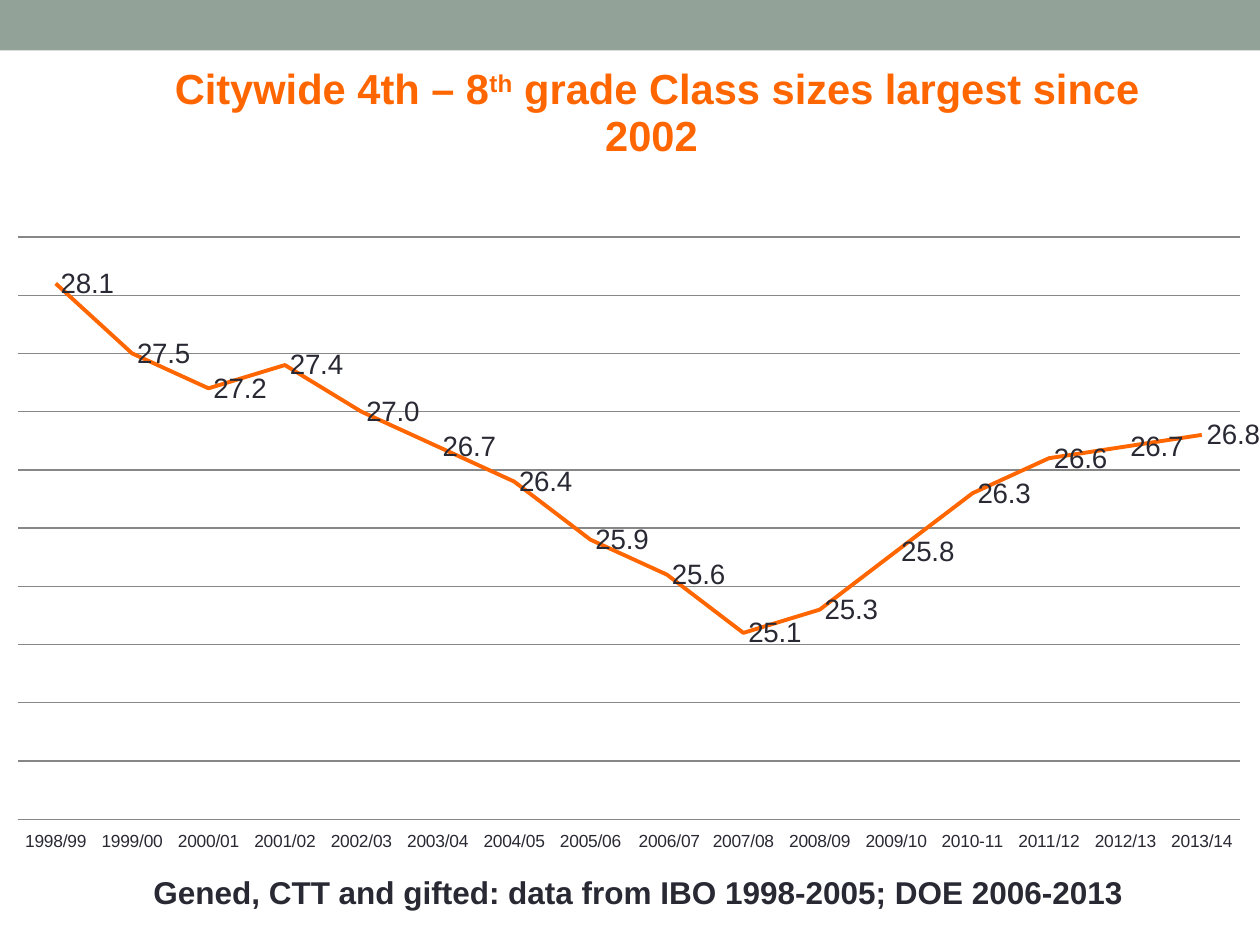
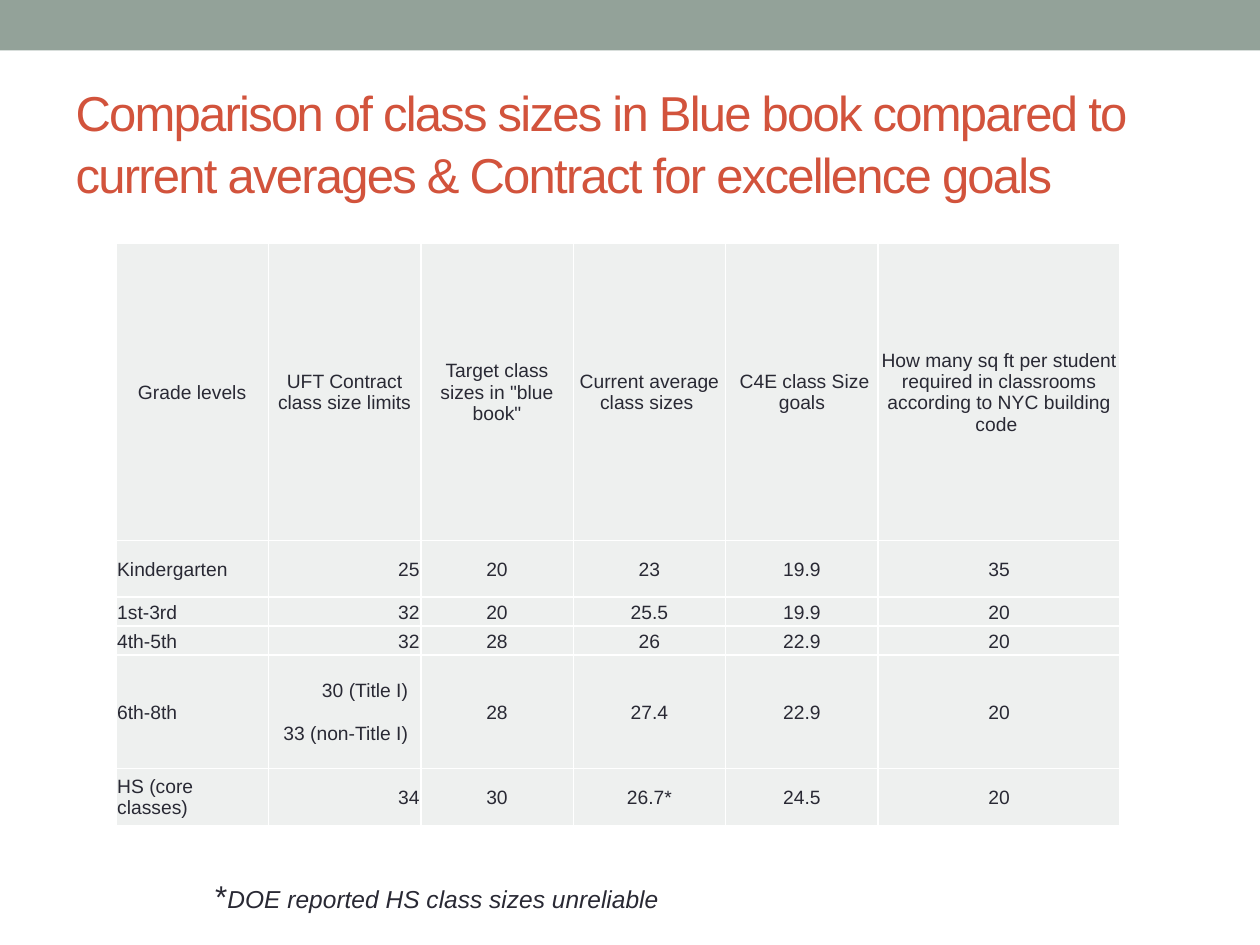
from lxml import etree
from pptx import Presentation
from pptx.chart.data import CategoryChartData
from pptx.dml.color import RGBColor
from pptx.enum.chart import XL_CHART_TYPE, XL_LABEL_POSITION, XL_TICK_LABEL_POSITION, XL_TICK_MARK
from pptx.enum.shapes import MSO_SHAPE
from pptx.enum.text import MSO_ANCHOR, MSO_AUTO_SIZE, PP_ALIGN
from pptx.oxml import parse_xml
from pptx.oxml.ns import nsdecls, qn
from pptx.util import Inches, Pt

LINE = XL_CHART_TYPE.LINE
LABEL_RIGHT = XL_LABEL_POSITION.RIGHT
LABELS_LOW = XL_TICK_LABEL_POSITION.LOW
NO_TICK = XL_TICK_MARK.NONE
RECTANGLE = MSO_SHAPE.RECTANGLE
MIDDLE = MSO_ANCHOR.MIDDLE
FIT_SHAPE, NO_FIT = MSO_AUTO_SIZE.SHAPE_TO_FIT_TEXT, MSO_AUTO_SIZE.NONE
LEFT, CENTER, RIGHT = PP_ALIGN.LEFT, PP_ALIGN.CENTER, PP_ALIGN.RIGHT

FONT = "Arial"
COLORS = {
    "band": "93A299",
    "text": "292934",
    "title": "D2533C",
    "accent": "FF6600",
    "grid": "878787",
    "cell": "EEF0EF",
    "border": "FFFFFF",
}
TITLE_ONLY, BLANK = 5, 6

SCHOOL_YEARS = [
    "1998/99", "1999/00", "2000/01", "2001/02", "2002/03", "2003/04", "2004/05", "2005/06",
    " 2006/07", "2007/08", "2008/09", "2009/10", "2010-11", "2011/12", "2012/13", "2013/14",
]
CLASS_SIZES = [28.1, 27.5, 27.2, 27.4, 27, 26.7, 26.4, 25.9,
               25.6, 25.1, 25.3, 25.8, 26.3, 26.6, 26.7, 26.8]

COLUMN_WIDTHS = [1.21] * 5 + [1.92]
ROW_HEIGHTS = [2.36, 0.45, 0.23, 0.23, 0.9, 0.45]
COLUMN_ALIGNMENTS = [LEFT, RIGHT] + [CENTER] * 4
COMPARISON = [
    ["Grade levels", "UFT Contract class size limits", 'Target class sizes in "blue book"',
     "Current average class sizes ", " C4E class Size goals",
     "How many sq ft per student required in classrooms according to NYC building code "],
    ["Kindergarten", "25", "20", "23", "19.9", "35"],
    ["1st-3rd", "32", "20", "25.5", "19.9", "20"],
    ["4th-5th", "32", "28", "26", "22.9", "20"],
    ["6th-8th", "30 (Title I)\n33 (non-Title I)", "28", "27.4", "22.9", "20"],
    ["HS (core classes)", "34", "30", "26.7*", "24.5", "20"],
]


def rgb(name):
    """Return the named palette colour."""
    return RGBColor.from_string(COLORS[name])


def style_font(font, size, color="text", bold=False, italic=False):
    """Apply the shared typeface with a size, colour and emphasis."""
    font.name, font.size = FONT, Pt(size)
    font.bold, font.italic = bold, italic
    font.color.rgb = rgb(color)


def new_slide(prs, layout):
    """Add a slide with the top band."""
    slide = prs.slides.add_slide(prs.slide_layouts[layout])
    band = slide.shapes.add_shape(RECTANGLE, 0, 0, prs.slide_width, Inches(0.4))
    band.shadow.inherit = False
    band.fill.solid()
    band.fill.fore_color.rgb = rgb("band")
    band.line.fill.background()
    return slide


def add_note(slide, box):
    """Add a one-line note and return its paragraph."""
    note = slide.shapes.add_textbox(*map(Inches, box)).text_frame
    note.word_wrap = False
    note.auto_size = FIT_SHAPE
    return note.paragraphs[0]


def set_layout(parent, index, target=None, **fractions):
    """Place a chart part by fractions of the chart area."""
    for old in parent.findall(qn("c:layout")):
        parent.remove(old)
    layout = parse_xml(f"<c:layout {nsdecls('c')}><c:manualLayout/></c:layout>")
    settings = {"layoutTarget": target} if target else {}
    settings.update(xMode="edge", yMode="edge", **fractions)
    for tag, value in settings.items():
        etree.SubElement(layout[0], qn(f"c:{tag}")).set("val", str(value))
    parent.insert(index, layout)


def add_chart_title(chart):
    """Write the chart heading with its raised ordinal."""
    paragraph = chart.chart_title.text_frame.paragraphs[0]
    style_font(paragraph.font, 24, "accent", bold=True)
    for text, raised in [("Citywide 4th – 8", False), ("th", True),
                         (" grade Class sizes largest since 2002 ", False)]:
        run = paragraph.add_run()
        run.text = text
        style_font(run.font, 24, "accent", bold=True)
        if raised:
            run.font._element.set("baseline", "30000")
    set_layout(chart.chart_title._element, 1, x=0.13, y=0.02)


def add_size_chart(slide, box):
    """Add the line chart of class sizes by school year."""
    data = CategoryChartData(number_format="0.0")
    data.categories = SCHOOL_YEARS
    data.add_series("Series 1", CLASS_SIZES)
    chart = slide.shapes.add_chart(LINE, *map(Inches, box), data).chart
    style_font(chart.font, 10)
    chart.has_legend = False
    add_chart_title(chart)
    set_layout(chart._chartSpace.chart.plotArea, 0, "inner", x=0.006, y=0.209, w=0.987, h=0.623)

    years, sizes = chart.category_axis, chart.value_axis
    years.major_tick_mark = NO_TICK
    years.tick_label_position = LABELS_LOW
    sizes.minimum_scale, sizes.maximum_scale, sizes.major_unit = 23.5, 28.5, 0.5
    sizes.has_major_gridlines = True
    for line in (years.format.line, sizes.major_gridlines.format.line):
        line.color.rgb = rgb("grid")
        line.width = Pt(0.75)
    sizes.visible = False

    chart.plots[0].vary_by_categories = False
    trend = chart.plots[0].series[0]
    trend.smooth = False
    trend.format.line.color.rgb = rgb("accent")
    trend.format.line.width = Pt(2.25)
    labels = trend.data_labels
    labels.show_value = True
    labels.position = LABEL_RIGHT
    labels.number_format, labels.number_format_is_linked = "0.0", False
    style_font(labels.font, 16)


def style_cell(cell, alignment):
    """Format a table cell's text, margins, fill and borders."""
    cell.vertical_anchor = MIDDLE
    cell.margin_left = cell.margin_right = cell.margin_top = Inches(0.01)
    cell.margin_bottom = 0
    cell.fill.solid()
    cell.fill.fore_color.rgb = rgb("cell")
    paragraphs = cell.text_frame.paragraphs
    for paragraph in paragraphs:
        paragraph.alignment = alignment
        style_font(paragraph.font, 11)
    for paragraph in paragraphs[:-1]:
        paragraph.space_after = Pt(12.6)
        paragraph._p.get_or_add_pPr().set("marR", str(Inches(0.09)))
    for index, side in enumerate(("lnL", "lnR", "lnT", "lnB")):
        cell._tc.get_or_add_tcPr().insert(index, parse_xml(
            f'<a:{side} {nsdecls("a")} w="{Pt(1)}"><a:solidFill>'
            f'<a:srgbClr val="{COLORS["border"]}"/></a:solidFill></a:{side}>'))


def add_comparison_table(slide, box):
    """Add the table of class size limits, goals and averages."""
    table = slide.shapes.add_table(len(ROW_HEIGHTS), len(COLUMN_WIDTHS), *map(Inches, box)).table
    table.first_row = table.horz_banding = False
    for column, width in zip(table.columns, COLUMN_WIDTHS):
        column.width = Inches(width)
    for row_index, (row, height) in enumerate(zip(table.rows, ROW_HEIGHTS)):
        row.height = Inches(height)
        for cell, text, alignment in zip(row.cells, COMPARISON[row_index], COLUMN_ALIGNMENTS):
            cell.text = text
            style_cell(cell, alignment if row_index else CENTER)


def add_title(slide, box, text):
    """Place and format the slide title."""
    title = slide.shapes.title
    title.left, title.top, title.width, title.height = map(Inches, box)
    frame = title.text_frame
    frame.text = text
    frame.word_wrap = True
    frame.auto_size = NO_FIT
    frame.vertical_anchor = MIDDLE
    heading = frame.paragraphs[0]
    heading.alignment = LEFT
    heading.line_spacing = 1.05
    style_font(heading.font, 28, "title")
    heading.runs[0].font._element.set("spc", "-100")


def build_trend_slide(prs):
    """Build the slide on class sizes over time."""
    slide = new_slide(prs, BLANK)
    add_size_chart(slide, (0.08, 0.33, 9.92, 7.42))
    source = add_note(slide, (1.12, 6.88, 7.97, 0.71))
    source.text = "Gened, CTT and gifted: data from IBO 1998-2005; DOE 2006-2013"
    style_font(source.font, 18, bold=True)


def build_comparison_slide(prs):
    """Build the slide comparing class size standards."""
    slide = new_slide(prs, TITLE_ONLY)
    add_title(slide, (0.5, 0.58, 9, 1.08),
              "Comparison of class sizes in Blue book compared to "
              "current averages & Contract for excellence goals")
    add_comparison_table(slide, (0.92, 1.93, 7.97, 4.62))
    caveat = add_note(slide, (1.61, 6.91, 3.74, 0.4))
    for text, size, italic in [("*", 18, False),
                               ("DOE reported HS class sizes unreliable", 14, True)]:
        run = caveat.add_run()
        run.text = text
        style_font(run.font, size, italic=italic)


def main():
    """Build and save the presentation."""
    prs = Presentation()
    prs.slide_width, prs.slide_height = Inches(10), Inches(7.5)
    build_trend_slide(prs)
    build_comparison_slide(prs)
    prs.save("out.pptx")


if __name__ == "__main__":
    main()
